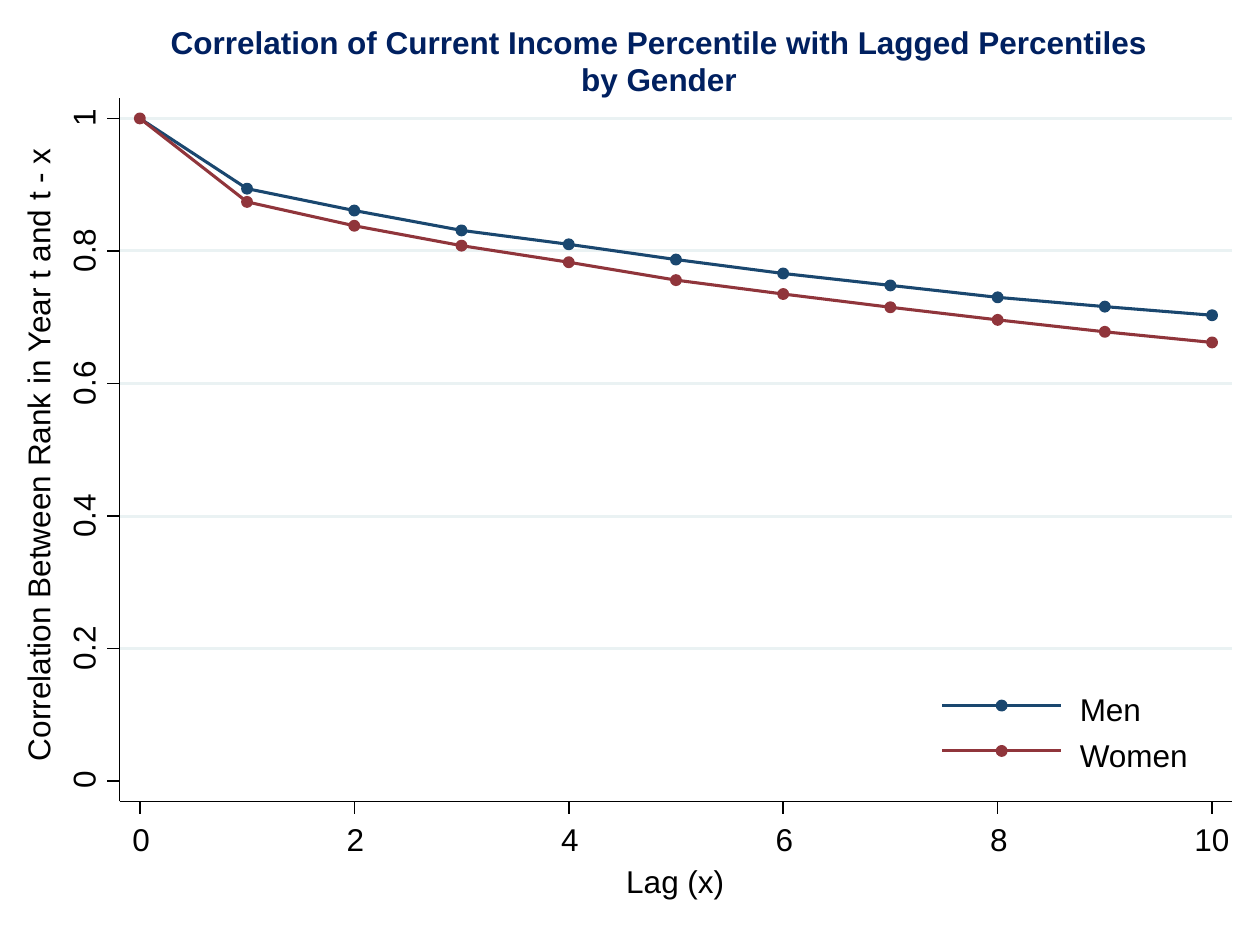
from lxml import etree
from pptx import Presentation
from pptx.dml.color import RGBColor
from pptx.enum import shapes, text
from pptx.oxml.ns import qn
from pptx.util import Inches, Pt

BLACK = RGBColor(0x00, 0x00, 0x00)
WHITE = RGBColor(0xFF, 0xFF, 0xFF)
GRID = RGBColor(0xEA, 0xF2, 0xF3)
TITLE = RGBColor(0x00, 0x20, 0x60)
NAVY = RGBColor(0x1A, 0x47, 0x6F)
MAROON = RGBColor(0x90, 0x35, 0x3B)

LEFT, RIGHT, TOP, BOTTOM = 0.95, 9.78, 0.78, 6.36
TICK = 0.1
MARKER = 0.07
LABEL_HEIGHT = 0.36

# Correlations in percent for lags 0 to 10
SERIES = [
    ("Men", NAVY, 0.63, [100, 89.4, 86.1, 83.1, 81, 78.7, 76.6, 74.8, 73, 71.6, 70.3]),
    ("Women", MAROON, 1.05, [100, 87.4, 83.8, 80.8, 78.3, 75.6, 73.5, 71.5, 69.6, 67.8, 66.2]),
]

presentation = Presentation()
presentation.slide_width, presentation.slide_height = Inches(10), Inches(7.5)
slide = presentation.slides.add_slide(presentation.slide_layouts[6])


def add_line(x1, y1, x2, y2, color, width):
    line = slide.shapes.add_connector(
        shapes.MSO_CONNECTOR.STRAIGHT, Inches(x1), Inches(y1), Inches(x2), Inches(y2))
    line.line.color.rgb = color
    line.line.width = Pt(width)
    etree.SubElement(line._element.spPr, qn("a:effectLst"))


def add_label(wording, left, top, width, rotation=0):
    box = slide.shapes.add_textbox(
        Inches(left), Inches(top), Inches(width), Inches(LABEL_HEIGHT))
    box.rotation = rotation
    frame = box.text_frame
    frame.margin_left = frame.margin_right = frame.margin_top = frame.margin_bottom = 0
    frame.word_wrap = False
    frame.auto_size = text.MSO_AUTO_SIZE.SHAPE_TO_FIT_TEXT
    frame.text = wording
    font = frame.paragraphs[0].runs[0].font
    font.name, font.size, font.color.rgb = "Arial", Pt(18), BLACK


# Plot area and legend background
for left, top, width, height in [
    (LEFT, TOP, RIGHT - LEFT, BOTTOM - TOP),
    (7.45, 5.46, 2.07, 0.65),
]:
    panel = slide.shapes.add_shape(
        shapes.MSO_SHAPE.RECTANGLE, Inches(left), Inches(top), Inches(width), Inches(height))
    panel.shadow.inherit = False
    panel.fill.solid()
    panel.fill.fore_color.rgb = WHITE
    panel.line.color.rgb = WHITE
    panel.line.width = Pt(0.88)

# Positions of lags and correlations on the slide
lag_x = [1.11 + 8.51 * lag / 10 for lag in range(11)]
tick_y = [6.2 - 5.26 * step / 5 for step in range(6)]

for y in tick_y[1:]:
    add_line(LEFT, y, RIGHT, y, GRID, 1.75)

# Curves with their markers and legend entries
for index, (name, color, name_width, percents) in enumerate(SERIES):
    points = [(x, 6.2 - 5.26 * percent / 100) for x, percent in zip(lag_x, percents)]
    vertices = [(Inches(x), Inches(y)) for x, y in points]
    builder = slide.shapes.build_freeform(*vertices[0])
    builder.add_line_segments(vertices[1:], close=False)
    curve = builder.convert_to_shape()
    curve.shadow.inherit = False
    curve.fill.background()
    curve.line.color.rgb = color
    curve.line.width = Pt(1.75)

    legend_y = 5.6 + 0.36 * index
    add_line(7.48, legend_y, 8.42, legend_y, color, 1.75)
    add_label(name, 8.57, legend_y - 0.12, name_width)

    # Both curves share the first point, so only the front one marks it
    first_marked = 1 if name == "Men" else 0
    for x, y in points[first_marked:] + [(7.95, legend_y)]:
        marker = slide.shapes.add_shape(
            shapes.MSO_SHAPE.OVAL, Inches(x - MARKER / 2), Inches(y - MARKER / 2),
            Inches(MARKER), Inches(MARKER))
        marker.shadow.inherit = False
        marker.fill.solid()
        marker.fill.fore_color.rgb = color
        marker.line.color.rgb = color
        marker.line.width = Pt(1.75)

# Vertical axis: rotated labels start below their tick
add_line(LEFT, BOTTOM, LEFT, TOP, BLACK, 0.88)
for wording, y in zip(["0", "0.2", "0.4", "0.6", "0.8", "1"], tick_y):
    add_line(LEFT, y, LEFT - TICK, y, BLACK, 0.88)
    width, start = (0.26, 0.06) if len(wording) == 1 else (0.48, 0.17)
    add_label(wording, 0.69 - width / 2,
              y + start - width / 2 - LABEL_HEIGHT / 2, width, 270)
add_label("Correlation Between Rank in Year t and t - x", -2.31, 3.22, 5.28, 270)

# Horizontal axis
add_line(LEFT, BOTTOM, RIGHT, BOTTOM, BLACK, 0.88)
for lag in range(0, 11, 2):
    x = lag_x[lag]
    add_line(x, BOTTOM, x, BOTTOM + TICK, BLACK, 0.88)
    width, start = (0.26, 0.06) if lag < 10 else (0.41, 0.14)
    add_label(str(lag), x - start, 6.51, width)
add_label("Lag (x)", 4.97, 6.84, 0.95)

title = slide.shapes.add_textbox(Inches(0.72), Inches(0.13), Inches(9.02), Inches(0.71))
title.text_frame.word_wrap = True
title.text_frame.auto_size = text.MSO_AUTO_SIZE.SHAPE_TO_FIT_TEXT
title.text_frame.text = (
    "Correlation of Current Income Percentile with Lagged Percentiles\nby Gender")
for paragraph in title.text_frame.paragraphs:
    paragraph.alignment = text.PP_ALIGN.CENTER
    font = paragraph.runs[0].font
    font.name, font.size, font.bold, font.color.rgb = "Arial", Pt(18), True, TITLE

presentation.save("out.pptx")
